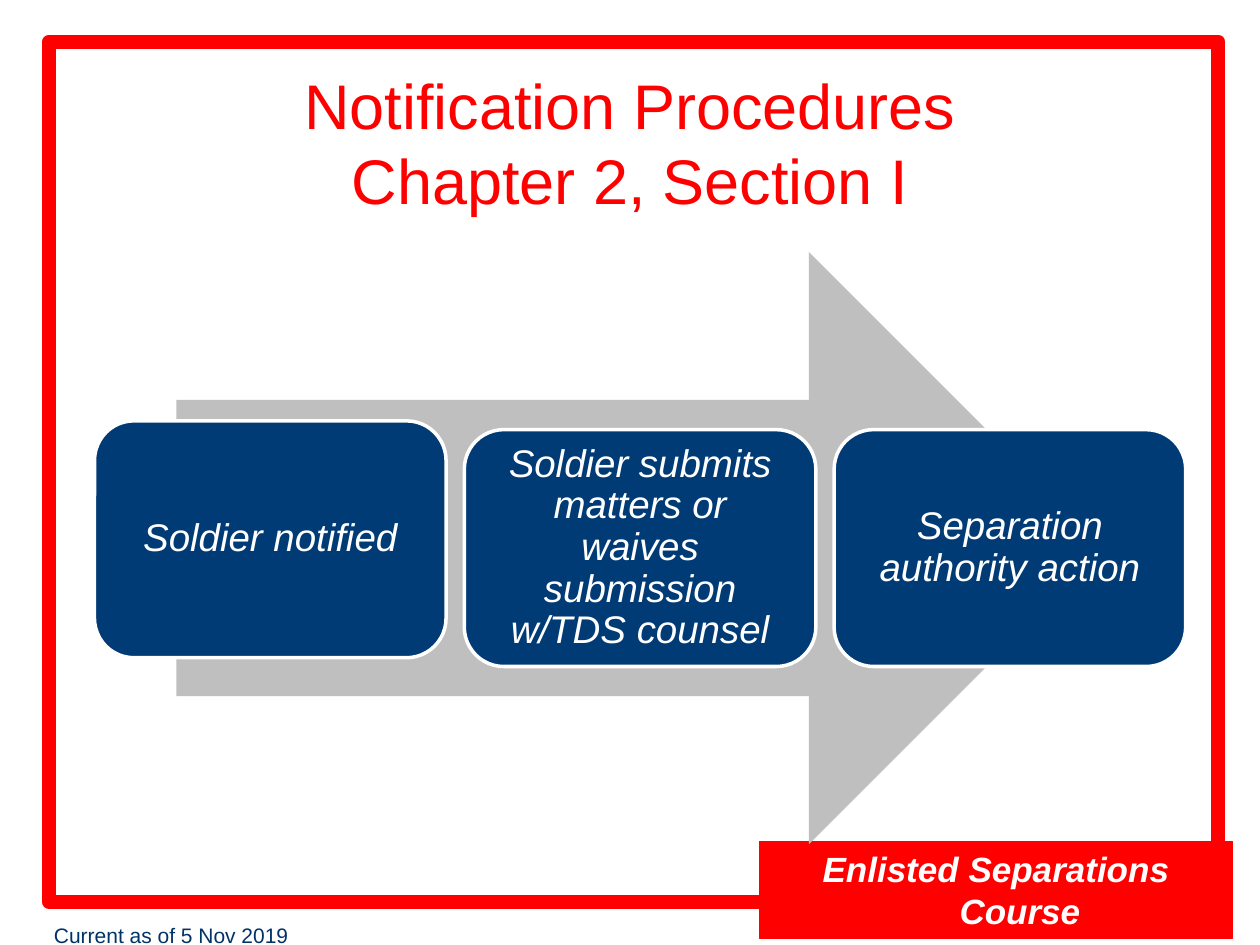
from pptx import Presentation
from pptx.dml.color import RGBColor
from pptx.enum.shapes import MSO_SHAPE
from pptx.enum.text import MSO_ANCHOR, PP_ALIGN
from pptx.util import Inches, Pt

RED = RGBColor(0xFF, 0x00, 0x00)
WHITE = RGBColor(0xFF, 0xFF, 0xFF)
GREY = RGBColor(0xBF, 0xBF, 0xBF)
BLUE = RGBColor(0x00, 0x3B, 0x76)
NAVY = RGBColor(0x00, 0x33, 0x66)

deck = Presentation()
deck.slide_width = Inches(10)
deck.slide_height = Inches(7.5)
slide = deck.slides.add_slide(deck.slide_layouts[5])


def draw(kind, place, fill=None, line=None, width=0):
    item = slide.shapes.add_shape(kind, *map(Inches, place))
    item.shadow.inherit = False
    if fill is None:
        item.fill.background()
    else:
        item.fill.solid()
        item.fill.fore_color.rgb = fill
    if line is None:
        item.line.fill.background()
    else:
        item.line.color.rgb = line
        item.line.width = Pt(width)
    return item


def write(item, text, color, frame, para, font):
    body = item.text_frame
    body.text = text
    first = body.paragraphs[0]
    face = first.runs[0].font if "\v" not in text else first.font
    looks = [(body, frame), (first, para)]
    looks += [(run.font, {"name": "Arial", **font}) for run in first.runs]
    for target, form in looks:
        for key, value in form.items():
            setattr(target, key, value)
    for run in first.runs:
        run.font.color.rgb = color


MID = {"alignment": PP_ALIGN.CENTER}

title = slide.shapes.title
for key, value in {"left": 0.5, "top": 0.5, "width": 9, "height": 1.25}.items():
    setattr(title, key, Inches(value))
write(title, "Notification Procedures\vChapter 2, Section I", RED,
      {"vertical_anchor": MSO_ANCHOR.MIDDLE, "word_wrap": True},
      MID, {"size": Pt(36)})

draw(MSO_SHAPE.RECTANGLE, (0.39, 0.33, 9.28, 6.83), line=RED, width=8)

badge = draw(MSO_SHAPE.RECTANGLE, (6.03, 6.68, 3.75, 0.77), RED, RED, 0.75)
write(badge, "Enlisted Separations Course", WHITE,
      {"vertical_anchor": MSO_ANCHOR.TOP, "word_wrap": True},
      MID, {"size": Pt(20), "bold": True, "italic": True})
indent = badge.text_frame.paragraphs[0]._p.get_or_add_pPr()
indent.set("marL", str(Inches(0.38)))
indent.set("indent", str(Inches(-0.38)))

date = slide.shapes.add_textbox(*map(Inches, (0.33, 7.25, 2.08, 0.32)))
write(date, "Current as of 5 Nov 2019", NAVY, {"word_wrap": False},
      {"line_spacing": 1.1}, {"size": Pt(12)})

draw(MSO_SHAPE.RIGHT_ARROW, (1.4, 2, 7.37, 4.7), GREY)

LEFT, STEP, WIDE, HIGH = 0.75, 2.935, 2.79, 1.88
PAD = {f"margin_{side}": Inches(0.18) for side in ("left", "top", "right", "bottom")}
STAGES = [
    ("Soldier notified", 3.34),
    ("Soldier submits matters or waives submission w/TDS counsel", 3.41),
    ("Separation authority action", 3.41),
]
for col, (text, top) in enumerate(STAGES):
    box = draw(MSO_SHAPE.ROUNDED_RECTANGLE,
               (LEFT + col * STEP, top, WIDE, HIGH), BLUE, WHITE, 2)
    # keep
    write(box, text, WHITE,
          {"vertical_anchor": MSO_ANCHOR.MIDDLE, "word_wrap": True, **PAD},
          {**MID, "line_spacing": 0.9}, {"size": Pt(22), "italic": True})

deck.save("out.pptx")
